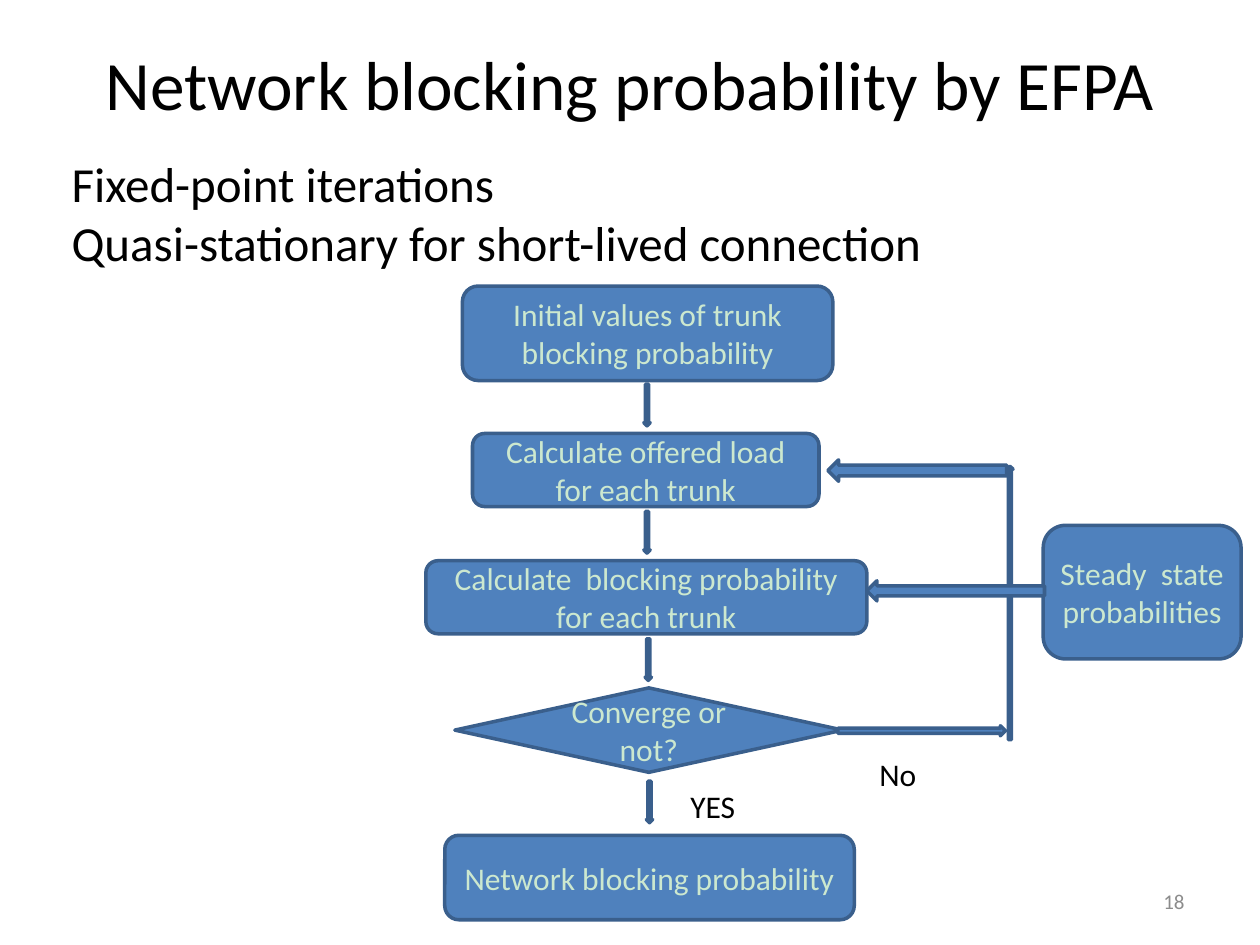
from dataclasses import dataclass

from pptx import Presentation
from pptx import util as u
from pptx.dml import color
from pptx.enum import shapes, text

KIND = shapes.MSO_SHAPE
ALIGN = text.PP_ALIGN
ANCHOR = text.MSO_ANCHOR


@dataclass(frozen=True)
class Theme:
    """Colours, font and type sizes of the deck."""

    background: str = "FFFFFF"
    ink: str = "000000"
    muted: str = "8C8C8C"
    fill: str = "4F81BD"
    outline: str = "3A5F8C"
    label: str = "CCE8CF"
    font: str = "Calibri"
    title: float = 39.6
    body: float = 28
    node: float = 18
    small: float = 12
    stroke: float = 2


THEME = Theme()


@dataclass(frozen=True)
class Box:
    """A rectangle in inches."""

    left: float
    top: float
    width: float
    height: float

    def inner(self, left, top, width, height):
        """Return a box whose corner is offset from this one."""
        return Box(self.left + left, self.top + top, width, height)

    def lengths(self):
        """Return left, top, width and height as lengths."""
        return [u.Inches(n) for n in (self.left, self.top, self.width, self.height)]


def rgb(value):
    """Turn a hex string into a colour."""
    return color.RGBColor.from_string(value)


def write(frame, words, size, ink, align, anchor):
    """Fill a text frame and format its runs."""
    frame.word_wrap = True
    frame.vertical_anchor = anchor
    frame.text = words
    for para in frame.paragraphs:
        para.alignment = align
        for span in para.runs:
            span.font.name = THEME.font
            span.font.size = u.Pt(size)
            span.font.color.rgb = rgb(ink)


def add_text(page, box, words, size, ink=THEME.ink, align=ALIGN.LEFT, anchor=ANCHOR.TOP):
    """Add a text box."""
    label = page.shapes.add_textbox(*box.lengths())
    write(label.text_frame, words, size, ink, align, anchor)


def add_block(page, box, kind):
    """Add a filled and outlined shape."""
    block = page.shapes.add_shape(kind, *box.lengths())
    block.shadow.inherit = False
    block.fill.solid()
    block.fill.fore_color.rgb = rgb(THEME.fill)
    block.line.color.rgb = rgb(THEME.outline)
    block.line.width = u.Pt(THEME.stroke)
    return block


def add_node(page, box, words, kind=KIND.FLOWCHART_ALTERNATE_PROCESS):
    """Add a flowchart node with a centred label."""
    node = add_block(page, box, kind)
    write(node.text_frame, words, THEME.node, THEME.label, ALIGN.CENTER, ANCHOR.MIDDLE)
    return node


def add_heading(page, box):
    """Place the title and the two lines below it."""
    add_text(page, box.inner(0.03, 0, 9, 0.72), "Network blocking probability by EFPA",
             THEME.title, align=ALIGN.CENTER, anchor=ANCHOR.MIDDLE)
    add_text(page, box.inner(0, 0.87, box.width, 1.04),
             "Fixed-point iterations\nQuasi-stationary for short-lived connection", THEME.body)


def add_steps(page, box):
    """Place the column of steps with the arrows between them."""
    steps = [
        (0.29, 0, 2.94, 0.75, "Initial values of trunk blocking probability"),
        (0.37, 1.17, 2.75, 0.58, "Calculate offered load for each trunk"),
        (0, 2.18, 3.5, 0.58, "Calculate  blocking probability for each trunk"),
        (0.15, 4.36, 3.25, 0.67, "Network blocking probability"),
    ]
    for left, top, width, height, words in steps:
        add_node(page, box.inner(left, top, width, height), words)
    add_node(page, box.inner(0.23, 3.19, 3.08, 0.67), "Converge or not?", KIND.FLOWCHART_DECISION)
    for left, top in ((1.73, 0.78), (1.73, 1.79), (1.74, 2.8), (1.75, 3.93)):
        add_block(page, box.inner(left, top, 0.05, 0.33), KIND.DOWN_ARROW)
    add_text(page, box.inner(2, 3.93, 0.92, 0.42), "YES", THEME.node)


def add_feedback(page, box):
    """Place the return loop and the steady state input."""
    arrows = [
        (0.08, 2.11, 1.33, 0.08, KIND.RIGHT_ARROW),
        (1.42, 0.05, 0.05, 2.17, KIND.UP_ARROW),
        (0, 0, 1.42, 0.17, KIND.LEFT_ARROW),
    ]
    for left, top, width, height, kind in arrows:
        add_block(page, box.inner(left, top, width, height), kind)
    add_text(page, box.inner(0.31, 2.29, 0.92, 0.42), "No", THEME.node)
    frame = add_node(page, box.inner(1.71, 0.52, 1.57, 1.06),
                     "Steady  state probabilities").text_frame
    frame.margin_left = frame.margin_right = frame.margin_top = frame.margin_bottom = 0
    add_block(page, box.inner(0.31, 0.96, 1.41, 0.16), KIND.LEFT_ARROW)


def add_page_number(page, box):
    """Place the page number."""
    add_text(page, box, "18", THEME.small, THEME.muted, ALIGN.RIGHT, ANCHOR.MIDDLE)


def main():
    """Build and save the deck."""
    deck = Presentation()
    deck.slide_width, deck.slide_height = u.Inches(10), u.Inches(7.5)
    page = deck.slides.add_slide(deck.slide_layouts[6])
    page.background.fill.solid()
    page.background.fill.fore_color.rgb = rgb(THEME.background)
    add_heading(page, Box(0.47, 0.3, 9.06, 1.91))
    add_page_number(page, Box(7.17, 6.95, 2.33, 0.4))
    add_steps(page, Box(3.38, 2.27, 3.5, 5.03))
    add_feedback(page, Box(6.57, 3.65, 3.28, 2.71))
    deck.save("out.pptx")


if __name__ == "__main__":
    main()
